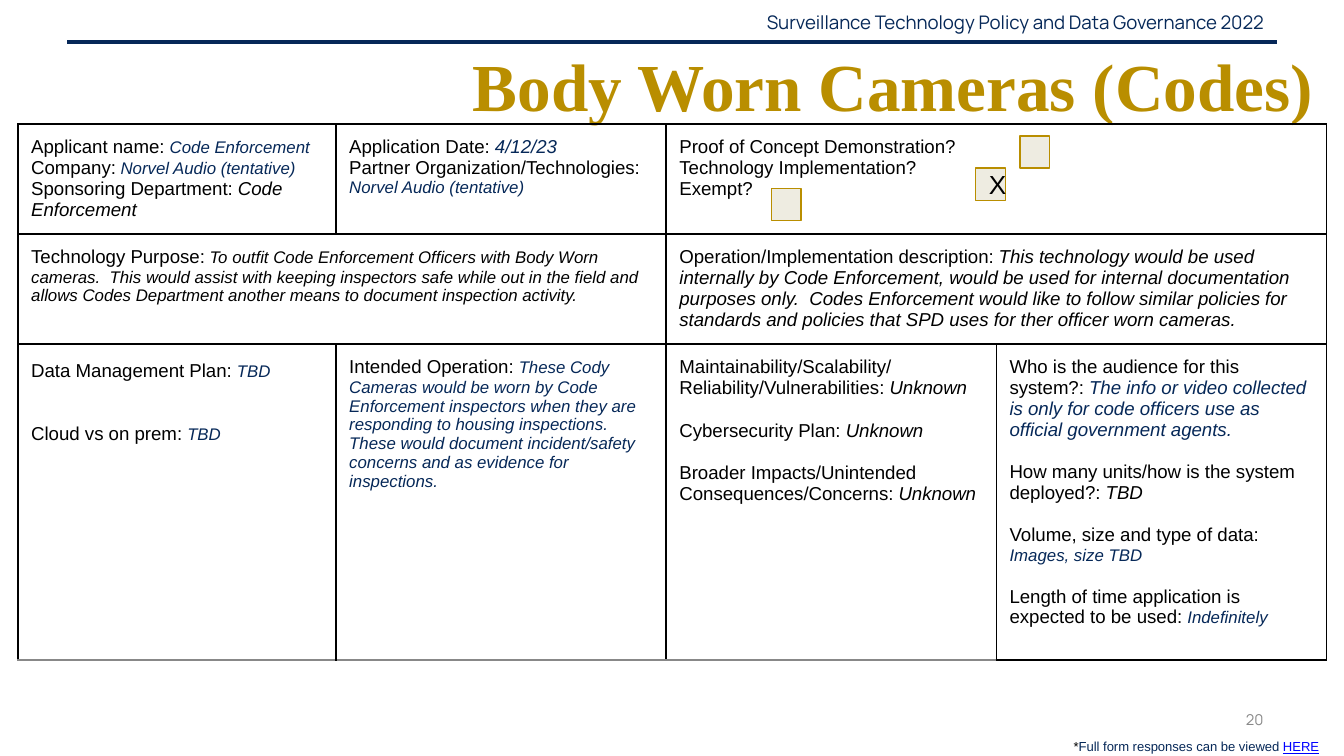
"""Build the technology request summary slide for body worn cameras."""
from dataclasses import dataclass
from typing import Optional

from lxml import etree
from pptx import Presentation
from pptx.dml.color import RGBColor
from pptx.enum.shapes import MSO_CONNECTOR, MSO_SHAPE
from pptx.enum.text import MSO_ANCHOR, PP_ALIGN
from pptx.oxml.ns import qn
from pptx.util import Cm, Pt

LEFT, RIGHT = PP_ALIGN.LEFT, PP_ALIGN.RIGHT
TOP, MIDDLE = MSO_ANCHOR.TOP, MSO_ANCHOR.MIDDLE
RECTANGLE, STRAIGHT = MSO_SHAPE.RECTANGLE, MSO_CONNECTOR.STRAIGHT

NAVY = RGBColor(0x06, 0x28, 0x58)
GOLD = RGBColor(0xB9, 0x8E, 0x00)
BLACK = RGBColor(0, 0, 0)
GRAY = RGBColor(0x88, 0x88, 0x88)
CREAM = RGBColor(0xEE, 0xEC, 0xE1)
BLUE = RGBColor(0, 0, 0xFF)
INSET = Cm(0.25)
BOTTOM_INSET = Cm(0.05)
GAP = 11.5
VENDOR = "Norvel Audio (tentative)"


@dataclass(frozen=True)
class Span:
    text: str
    size: float = 10
    color: RGBColor = BLACK
    italic: bool = False
    bold: bool = False
    underline: bool = False
    font: str = "Arial"


@dataclass(frozen=True)
class Line:
    spans: tuple[Span, ...]
    before: float = 0
    spacing: Optional[float] = None


@dataclass(frozen=True)
class Entry:
    row: int
    column: int
    lines: tuple[Line, ...]
    columns: int = 1
    bottom: RGBColor = BLACK


@dataclass(frozen=True)
class Checkbox:
    left: float
    top: float
    mark: str = ""


def label(text: str) -> Span:
    return Span(text)


def answer(text: str, size: float = 9, color: RGBColor = NAVY) -> Span:
    return Span(text, size, color, italic=True)


def line(*spans: Span, before: float = 0, spacing: Optional[float] = None) -> Line:
    return Line(spans, before, spacing)


ENTRIES = (
    Entry(0, 0, (
        line(label("Applicant name: "), answer("Code Enforcement")),
        line(label("Company:"), Span(" ", 9), answer(VENDOR)),
        line(label("Sponsoring Department: "), answer("Code Enforcement", 10, BLACK)),
    )),
    Entry(0, 1, (
        line(label("Application Date: "), answer("4/12/23", 10)),
        line(label("Partner Organization/Technologies: \n"), answer(VENDOR)),
    )),
    Entry(0, 2, (
        line(label("Proof of Concept Demonstration?")),
        line(label("Technology Implementation?")),
        line(label("Exempt?")),
    ), columns=2),
    Entry(1, 0, (
        line(label("Technology Purpose:"), Span(" ", 9), answer(
            "To outfit Code Enforcement Officers with Body Worn cameras.  This would assist "
            "with keeping inspectors safe while out in the field and allows Codes Department "
            "another means to document inspection activity.", 9, BLACK)),
    ), columns=2),
    Entry(1, 2, (
        line(label("Operation/Implementation description: "), answer(
            "This technology would be used internally by Code Enforcement, would be used for "
            "internal documentation purposes only.  Codes Enforcement would like to follow "
            "similar policies for standards and policies that SPD uses for ther officer worn "
            "cameras.", 10, BLACK)),
    ), columns=2),
    Entry(2, 0, (
        line(label("Data Management Plan: "), answer("TBD"), spacing=1.15),
        line(label("Cloud vs on prem: "), answer("TBD"), before=2 * GAP),
    ), bottom=GRAY),
    Entry(2, 1, (
        line(label("Intended Operation: "), answer(
            "These Cody Cameras would be worn by Code Enforcement inspectors when they are "
            "responding to housing inspections.  These would document incident/safety "
            "concerns and as evidence for inspections.")),
    ), bottom=GRAY),
    Entry(2, 2, (
        line(label("Maintainability/Scalability/Reliability/Vulnerabilities: "),
             answer("Unknown", 10, BLACK)),
        line(label("Cybersecurity Plan: "), answer("Unknown", 10, BLACK), before=GAP),
        line(label("Broader Impacts/Unintended Consequences/Concerns: "),
             answer("Unknown", 10, BLACK), before=GAP),
    ), bottom=GRAY),
    Entry(2, 3, (
        line(label("Who is the audience for this system?: "), answer(
            "The info or video collected is only for code officers use as official "
            "government agents.", 10)),
        line(label("How many units/how is the system deployed?: "),
             answer("TBD", 10, BLACK), before=GAP),
        line(label("Volume, size and type of data: "), answer("Images, size TBD"), before=GAP),
        line(label("Length of time application is expected to be used: "),
             answer("Indefinitely"), before=GAP),
    )),
)
CHECKBOXES = (Checkbox(19.28, 2.57), Checkbox(18.44, 3.18, "X"), Checkbox(14.58, 3.56))
COLUMN_WIDTHS = (6.01, 6.24, 6.24, 6.24)
ROW_HEIGHTS = (2.08, 2.08, 5.98)


def write_lines(frame, lines: tuple[Line, ...], align=LEFT) -> None:
    for index, content in enumerate(lines):
        paragraph = frame.add_paragraph() if index else frame.paragraphs[0]
        paragraph.alignment = align
        paragraph.space_before = Pt(content.before)
        if content.spacing:
            paragraph.line_spacing = content.spacing
        for span in content.spans:
            run = paragraph.add_run()
            run.text = span.text.rstrip("\n")
            font = run.font
            font.name, font.size, font.color.rgb = span.font, Pt(span.size), span.color
            font.italic, font.bold, font.underline = span.italic, span.bold, span.underline
            if span.text.endswith("\n"):
                paragraph.add_line_break()


def add_text(slide, left: float, top: float, width: float, height: float,
             *spans: Span, align=RIGHT, anchor=MIDDLE) -> None:
    frame = slide.shapes.add_textbox(Cm(left), Cm(top), Cm(width), Cm(height)).text_frame
    frame.word_wrap = True
    frame.vertical_anchor = anchor
    write_lines(frame, (line(*spans),), align)


def set_border(cell, side: str, color: RGBColor) -> None:
    border = etree.SubElement(cell._tc.get_or_add_tcPr(), qn(f"a:{side}"), w=str(Pt(1)))
    fill = etree.SubElement(border, qn("a:solidFill"))
    etree.SubElement(fill, qn("a:srgbClr"), val=str(color))


def add_form(slide) -> None:
    table = slide.shapes.add_table(
        len(ROW_HEIGHTS), len(COLUMN_WIDTHS), Cm(0.34), Cm(2.34),
        Cm(sum(COLUMN_WIDTHS)), Cm(sum(ROW_HEIGHTS))).table
    table.first_row = table.horz_banding = False
    for column, width in zip(table.columns, COLUMN_WIDTHS):
        column.width = Cm(width)
    for row, height in zip(table.rows, ROW_HEIGHTS):
        row.height = Cm(height)
    for entry in ENTRIES:
        last = entry.column + entry.columns - 1
        cell = table.cell(entry.row, entry.column)
        if entry.columns > 1:
            cell.merge(table.cell(entry.row, last))
        cell.margin_left = cell.margin_right = cell.margin_top = INSET
        cell.margin_bottom = BOTTOM_INSET
        write_lines(cell.text_frame, entry.lines)
        for column in range(entry.column, last + 1):
            part = table.cell(entry.row, column)
            for side in ("lnL", "lnR", "lnT"):
                set_border(part, side, BLACK)
            set_border(part, "lnB", entry.bottom)
            part.fill.background()


def add_checkbox(slide, checkbox: Checkbox) -> None:
    box = slide.shapes.add_shape(
        RECTANGLE, Cm(checkbox.left), Cm(checkbox.top), Cm(0.56), Cm(0.61))
    box.shadow.inherit = False
    box.fill.solid()
    box.fill.fore_color.rgb = CREAM
    box.line.color.rgb, box.line.width = GOLD, Pt(0.75)
    if checkbox.mark:
        frame = box.text_frame
        frame.margin_left = frame.margin_right = INSET
        frame.margin_top = frame.margin_bottom = INSET
        frame.vertical_anchor = MIDDLE
        write_lines(frame, (line(Span(checkbox.mark, 14)),))


def add_rule(slide) -> None:
    rule = slide.shapes.add_connector(STRAIGHT, Cm(1.27), Cm(0.79), Cm(24.13), Cm(0.79))
    rule.line.color.rgb, rule.line.width = NAVY, Pt(2.25)
    etree.SubElement(rule._element.spPr, qn("a:effectLst"))


def main() -> None:
    deck = Presentation()
    deck.slide_width, deck.slide_height = Cm(25.4), Cm(14.29)
    slide = deck.slides.add_slide(deck.slide_layouts[6])
    add_text(slide, 13.23, 0.03, 10.9, 0.76, Span(
        "Surveillance Technology Policy and Data Governance 2022", color=NAVY, font="Manrope"))
    add_text(slide, 18.21, 13.23, 5.92, 0.76, Span("20", 8, GRAY, font="Manrope"))
    add_rule(slide)
    add_text(slide, 5.33, 0.76, 19.74, 1.7, Span(
        "Body Worn Cameras (Codes)", 36, GOLD, bold=True, font="Times New Roman"))
    add_form(slide)
    for checkbox in CHECKBOXES:
        add_checkbox(slide, checkbox)
    add_text(slide, 20.04, 13.84, 5.36, 0.45, Span("*", 7),
             Span("Full form responses can be viewed ", 7, NAVY),
             Span("HERE", 7, BLUE, underline=True), align=LEFT, anchor=TOP)
    deck.save("out.pptx")


if __name__ == "__main__":
    main()
